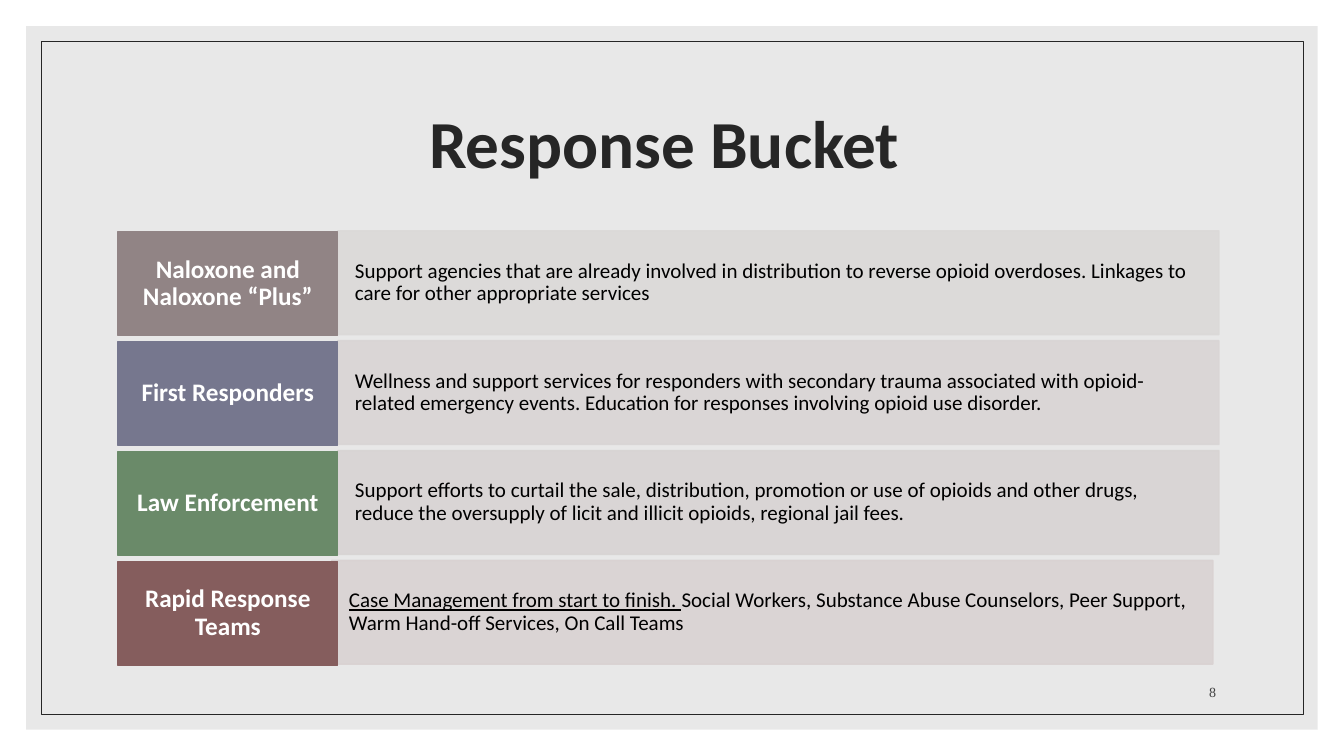
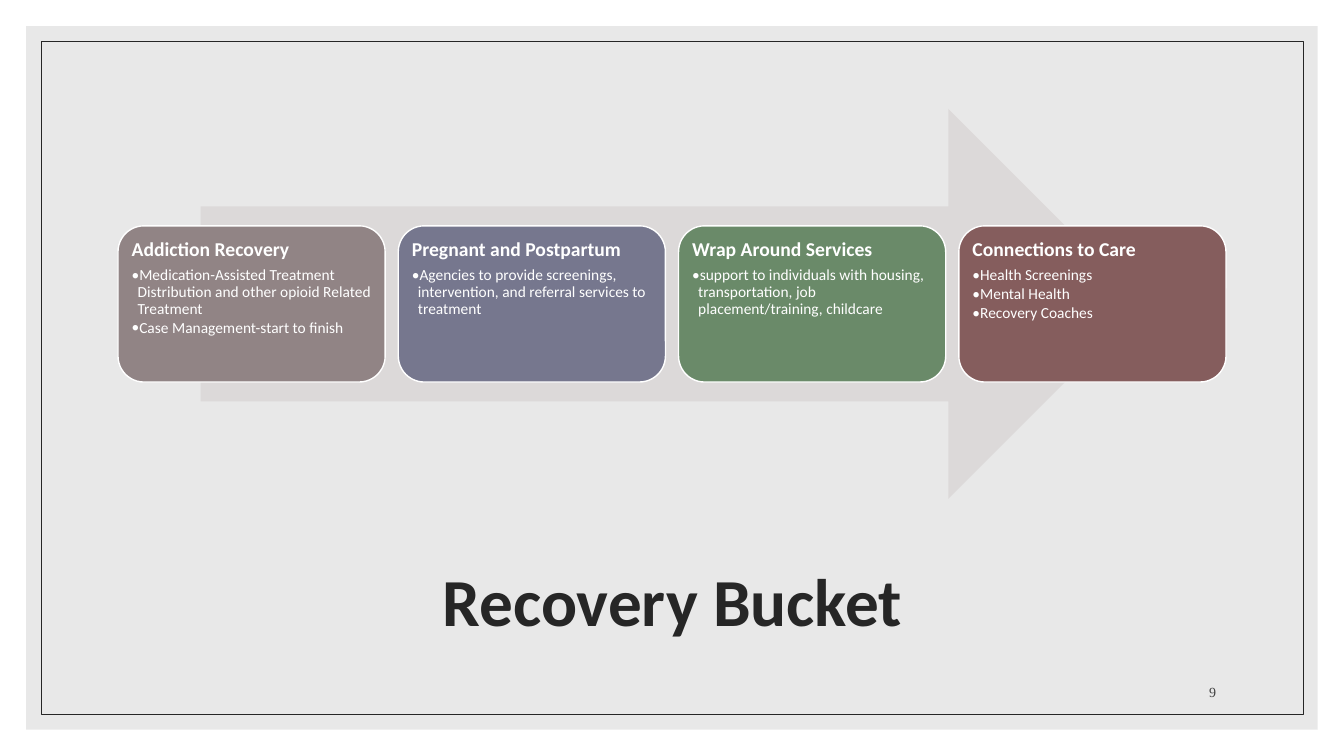
from lxml import etree
from pptx import Presentation
from pptx.dml.color import RGBColor
from pptx.enum.shapes import MSO_SHAPE
from pptx.enum.text import MSO_ANCHOR, PP_ALIGN
from pptx.oxml.ns import qn
from pptx.util import Inches, Pt

RECT = MSO_SHAPE.RECTANGLE
ROUNDED = MSO_SHAPE.ROUNDED_RECTANGLE
ARROW = MSO_SHAPE.RIGHT_ARROW
TOP, MIDDLE, BOTTOM = MSO_ANCHOR.TOP, MSO_ANCHOR.MIDDLE, MSO_ANCHOR.BOTTOM
LEFT, CENTER, RIGHT = PP_ALIGN.LEFT, PP_ALIGN.CENTER, PP_ALIGN.RIGHT

SANS, SERIF = "Calibri", "Times New Roman"
WHITE, BLACK, INK, NUMBER_GRAY = "FFFFFF", "000000", "262626", "404040"
PANEL_GRAY, ARROW_GRAY = "D9D9D9", "DCD9D9"
ACCENTS = ["918485", "76778E", "6A8A69", "855D5D"]
TINTS = ["DBD9D8", "D9D5D5", "D8D4D3", "D9D2D2"]

RESPONSES = [
    ("Naloxone and Naloxone “Plus”", "",
     "Support agencies that are already involved in distribution to reverse "
     "opioid overdoses. Linkages to care for other appropriate services"),
    ("First Responders", "",
     "Wellness and support services for responders with secondary trauma "
     "associated with opioid-related emergency events. Education for responses "
     "involving opioid use disorder."),
    ("Law Enforcement", "",
     "Support efforts to curtail the sale, distribution, promotion or use of "
     "opioids and other drugs, reduce the oversupply of licit and illicit "
     "opioids, regional jail fees."),
    ("Rapid Response Teams", "Case Management from start to finish. ",
     "Social Workers, Substance Abuse Counselors, Peer Support, "
     "Warm Hand-off Services, On Call Teams"),
]
RECOVERIES = [
    ("Addiction Recovery",
     ["Medication-Assisted Treatment Distribution and other opioid Related Treatment",
      "Case Management-start to finish"]),
    ("Pregnant and Postpartum",
     ["Agencies to provide screenings, intervention, and referral services to treatment"]),
    ("Wrap Around Services",
     ["support to individuals with housing, transportation, job "
      "placement/training, childcare"]),
    ("Connections to Care",
     ["Health Screenings", "Mental Health", "Recovery Coaches"]),
]


def rgb(value):
    return RGBColor.from_string(value)


def set_opacity(properties, percent):
    for color in properties.iter(qn("a:srgbClr")):
        etree.SubElement(color, qn("a:alpha")).set("val", str(percent * 1000))


def add_block(slide, preset, box, fill=None, line=None, line_width=1, opacity=100):
    block = slide.shapes.add_shape(preset, *map(Inches, box))
    block.shadow.inherit = False
    if fill:
        block.fill.solid()
        block.fill.fore_color.rgb = rgb(fill)
    else:
        block.fill.background()
    if line:
        block.line.color.rgb = rgb(line)
        block.line.width = Pt(line_width)
    else:
        block.line.fill.background()
    if opacity < 100:
        set_opacity(block.element.spPr, opacity)
    return block


def set_frame(shape, anchor, inset_x=0.1, inset_y=0.05):
    frame = shape.text_frame
    frame.word_wrap = True
    frame.vertical_anchor = anchor
    frame.margin_left = frame.margin_right = Inches(inset_x)
    frame.margin_top = frame.margin_bottom = Inches(inset_y)
    return frame


def style(paragraph, size, color, align=LEFT, bold=False, font=SANS, after=0, spacing=0.9):
    paragraph.alignment = align
    paragraph.line_spacing = spacing
    paragraph.space_after = Pt(after)
    for run in paragraph.runs:
        run.font.size = Pt(size)
        run.font.name = font
        run.font.bold = bold
        run.font.color.rgb = rgb(color)


def add_bullet(paragraph):
    properties = paragraph._p.get_or_add_pPr()
    indent = Inches(0.06)
    properties.set("marL", str(indent))
    properties.set("indent", str(-indent))
    etree.SubElement(properties, qn("a:buFont")).set("typeface", SANS)
    etree.SubElement(properties, qn("a:buChar")).set("char", "•")


def add_text(slide, box, text, anchor, **look):
    frame = set_frame(slide.shapes.add_textbox(*map(Inches, box)), anchor)
    frame.text = text
    style(frame.paragraphs[0], **look)


def add_base(deck, title, title_left, title_top, number):
    slide = deck.slides.add_slide(deck.slide_layouts[6])
    add_block(slide, RECT, (0.26, 0.26, 12.81, 6.98), PANEL_GRAY, opacity=60)
    add_block(slide, RECT, (0.41, 0.41, 12.52, 6.68), line=INK, line_width=0.5)
    add_text(slide, (title_left, title_top, 11, 1.5), title, MIDDLE,
             size=48, color=INK, align=CENTER, bold=True)
    add_text(slide, (11.24, 6.6, 0.92, 0.4), number, BOTTOM, size=10,
             color=NUMBER_GRAY, align=RIGHT, font=SERIF, after=6, spacing=1)
    return slide


def add_response(slide, left, top, response, accent, tint):
    label, lead, detail = response
    detail_bar = add_block(slide, RECT, (left, top - 0.01, 8.74, 1.03), tint, tint, opacity=90)
    paragraph = set_frame(detail_bar, MIDDLE, 0.17, 0.26).paragraphs[0]
    for words, underlined in ((lead, True), (detail, False)):
        if words:
            run = paragraph.add_run()
            run.text = words
            run.font.underline = underlined
    style(paragraph, 15, BLACK, after=5.25)

    label_bar = add_block(slide, RECT, (1.17, top, 2.18, 1.03), accent, accent)
    frame = set_frame(label_bar, MIDDLE, 0.12, 0.1)
    frame.text = label
    style(frame.paragraphs[0], 18, WHITE, CENTER, True, after=6.3)


def add_recovery(slide, left, recovery, accent):
    heading, services = recovery
    card = add_block(slide, ROUNDED, (left, 2.24, 2.65, 1.55), accent, WHITE)
    frame = set_frame(card, TOP, 0.06, 0.06)
    frame.text = heading
    style(frame.paragraphs[0], 14, WHITE, bold=True, after=4.9)
    for service in services:
        paragraph = frame.add_paragraph()
        paragraph.text = service
        paragraph.level = 1
        style(paragraph, 11, WHITE, after=1.65)
        add_bullet(paragraph)


def build_response(deck):
    slide = add_base(deck, "Response Bucket", 1.09, 0.71, "8")
    lefts = [3.35, 3.35, 3.35, 3.29]
    for row, parts in enumerate(zip(RESPONSES, ACCENTS, TINTS)):
        add_response(slide, lefts[row], 2.3 + row * 1.09, *parts)


def build_recovery(deck):
    slide = add_base(deck, "Recovery Bucket", 1.17, 5.25, "9")
    add_block(slide, ARROW, (1.99, 1.08, 9.35, 3.87), ARROW_GRAY)
    for column, parts in enumerate(zip(RECOVERIES, ACCENTS)):
        add_recovery(slide, 1.17 + column * 2.78, *parts)


def main():
    deck = Presentation()
    deck.slide_width, deck.slide_height = Inches(13.33), Inches(7.5)
    build_response(deck)
    build_recovery(deck)
    deck.save("out.pptx")


if __name__ == "__main__":
    main()
